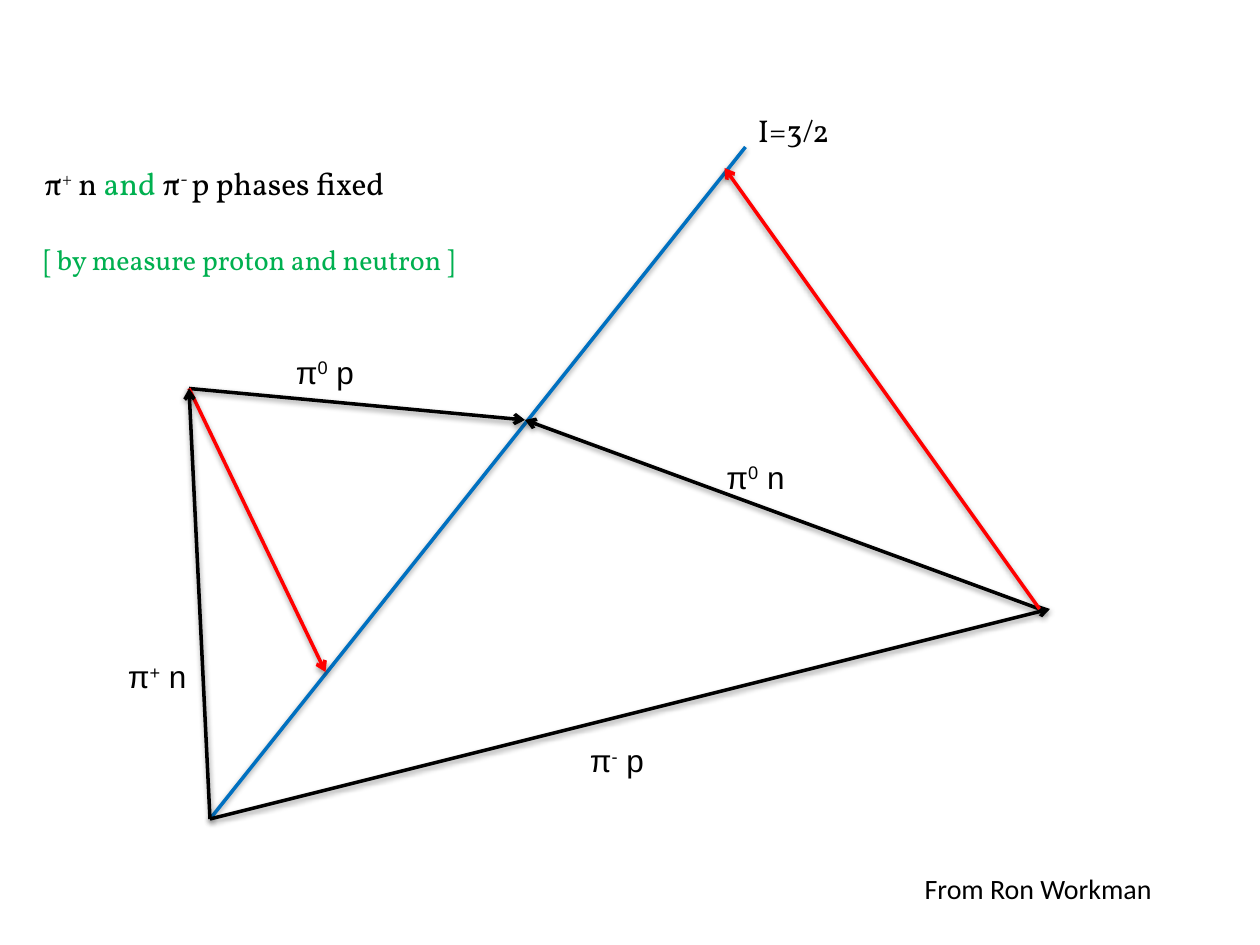
from lxml.etree import SubElement
from pptx import Presentation
from pptx.dml.color import RGBColor
from pptx.enum.shapes import MSO_CONNECTOR
from pptx.enum.text import MSO_ANCHOR, PP_ALIGN
from pptx.oxml.ns import qn
from pptx.util import Pt

COLORS = {"black": "000000", "blue": "0070C0", "red": "FF0000", "green": "00B050"}

presentation = Presentation()
presentation.slide_width, presentation.slide_height = Pt(720), Pt(540)
slide = presentation.slides.add_slide(presentation.slide_layouts[6])


def add_vector(start, end, color, arrow=True):
    connector = slide.shapes.add_connector(
        MSO_CONNECTOR.STRAIGHT, *(Pt(value) for value in start + end))
    connector.line.width = Pt(2)
    connector.line.color.rgb = RGBColor.from_string(COLORS[color])
    if arrow:
        SubElement(connector.line._get_or_add_ln(), qn("a:tailEnd"), type="arrow")
    # Soft shadow straight below the line
    effects = SubElement(connector._element.spPr, qn("a:effectLst"))
    shadow = SubElement(effects, qn("a:outerShdw"), blurRad=str(Pt(3.15)),
                        dist=str(Pt(1.57)), dir="5400000", rotWithShape="0")
    shadow_color = SubElement(shadow, qn("a:srgbClr"), val=COLORS["black"])
    SubElement(shadow_color, qn("a:alpha"), val="38000")


def add_text(box, runs, font="Arial", size=18):
    shape = slide.shapes.add_textbox(*(Pt(value) for value in box))
    shape.text_frame.word_wrap = True
    paragraph = shape.text_frame.paragraphs[0]
    for text, color, raised in runs:
        run = paragraph.add_run()
        run.text = text
        run.font.name = font
        run.font.size = Pt(size)
        run.font.color.rgb = RGBColor.from_string(COLORS[color])
        if raised:
            run._r.get_or_add_rPr().set("baseline", "30000")
    return shape


# Amplitude triangles: shared corners
origin, left_corner, middle, right_corner = (120, 468), (108, 222), (300, 240), (594, 348)
add_vector(origin, (426, 84), "blue", arrow=False)
add_vector(origin, (600, 348), "black")
add_vector(left_corner, middle, "black")
add_vector(left_corner, (186, 384), "red")
add_vector(right_corner, middle, "black")
add_vector(right_corner, (414, 96), "red")
add_vector(origin, left_corner, "black")

# Labels of the vectors
add_text((426, 60, 60, 29), [("I=3/2", "black", False)], "Vollkorn")
pion_labels = [
    ((66, 372, 66, 29), "+", "n"),
    ((162, 198, 72, 29), "0", "p"),
    ((408, 258, 54, 29), "0", "n"),
    ((330, 420, 54, 30), "-", "p"),
]
for box, charge, nucleon in pion_labels:
    add_text(box, [("π", "black", False), (charge, "black", True),
                   (f" {nucleon}", "black", False)])

# Statement about the phases
add_text((18, 90, 282, 29), [
    ("π", "black", False), ("+", "black", True), (" n ", "black", False),
    ("and ", "green", False), ("π", "black", False), ("- ", "black", True),
    ("p phases fixed", "black", False)], "Vollkorn")
add_text((18, 135, 260, 27),
         [("[ by measure proton and neutron ]", "green", False)], "Vollkorn", 16)

# Credit
credit = add_text((494.5, 482.5, 197.5, 50.5),
                  [("From Ron Workman", "black", False)], "Calibri", 16)
credit.text_frame.vertical_anchor = MSO_ANCHOR.MIDDLE
credit.text_frame.paragraphs[0].alignment = PP_ALIGN.CENTER

presentation.save("out.pptx")
